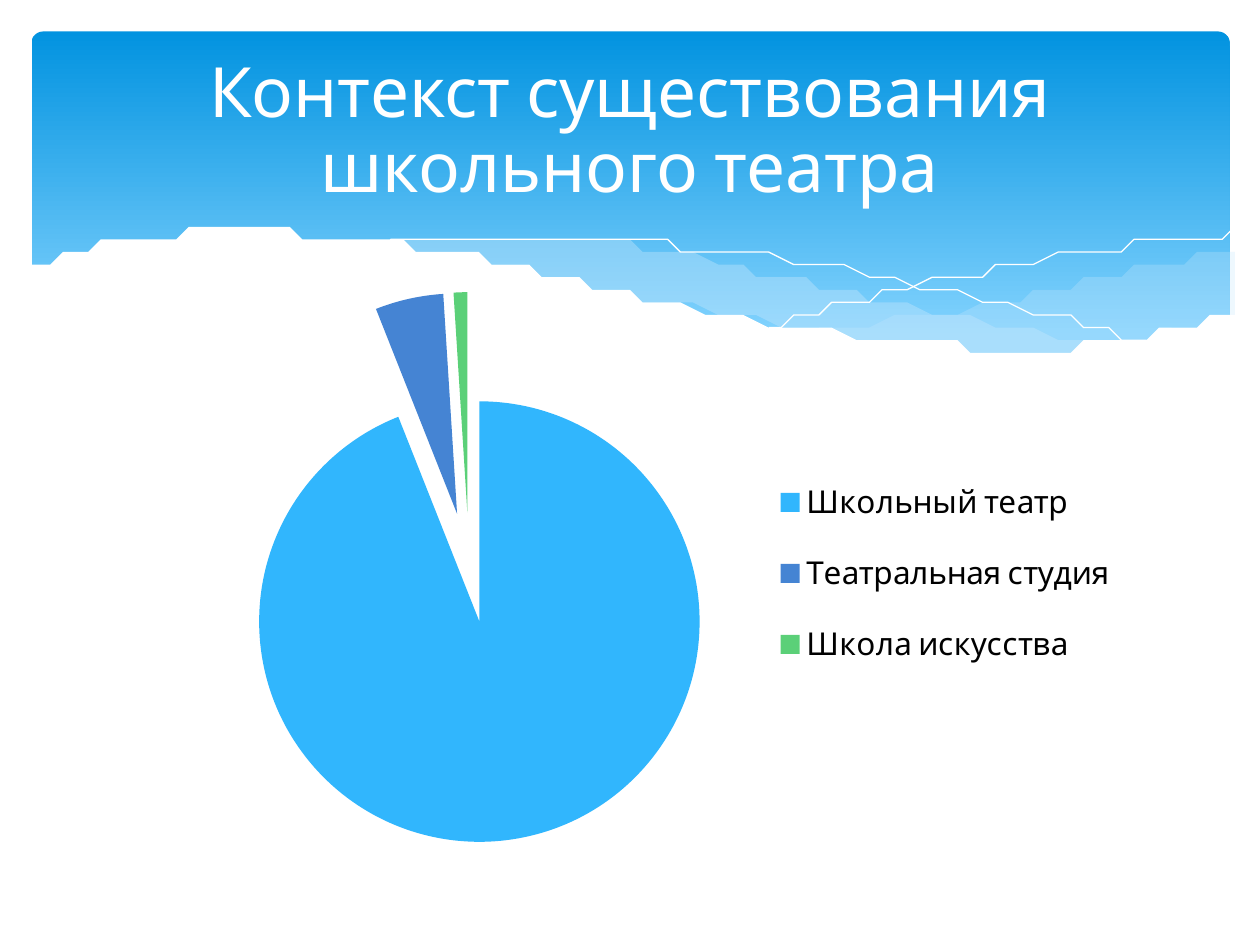
"""Build the slide on the setting of a school theatre."""
import pptx
import pptx.chart.data
import pptx.dml.color
import pptx.enum.chart
import pptx.enum.shapes
import pptx.enum.text
import pptx.oxml
import pptx.oxml.ns
import pptx.util

FONT = "Cabin"
WHITE = "FFFFFF"
deck = pptx.Presentation()
deck.slide_width = pptx.util.Inches(10)
deck.slide_height = pptx.util.Inches(7.5)
col = deck.slide_width // 100
row = deck.slide_height // 75
slide = deck.slides.add_slide(deck.slide_layouts[6])


def tint(code):
    return pptx.dml.color.RGBColor.from_string(code)


def bend(knots, steps=6):
    """Return points of a smooth curve through the knots."""
    ends = [knots[0]] + knots + [knots[-1]]
    curve = [knots[0]]
    for a, b, c, d in zip(ends, ends[1:], ends[2:], ends[3:]):
        for step in range(1, steps + 1):
            t = step / steps
            curve.append(tuple(
                (2 * q + (r - p) * t + (2 * p - 5 * q + 4 * r - s) * t**2
                 + (3 * q - p - 3 * r + s) * t**3) / 2
                for p, q, r, s in zip(a, b, c, d)))
    return curve


band = slide.shapes.add_shape(
    pptx.enum.shapes.MSO_SHAPE.ROUNDED_RECTANGLE,
    int(2.5 * col), int(2.5 * row), int(95.1 * col), 27 * row)
band.adjustments[0] = 0.034
band.shadow.inherit = False
band.line.fill.background()
band.fill.gradient()
band.fill.gradient_angle = 270
for stop, code, place in zip(band.fill.gradient_stops, ["0293E0", "83D3FE"], [0, 0.9]):
    stop.color.rgb = tint(code)
    stop.position = place

right = (bend([(97.5, 20), (92.1, 21), (86.1, 22.3), (77.9, 24.2), (66.1, 26.5)])
         + bend([(66.1, 26.5), (73.2, 27.4), (80.3, 27.8), (87.2, 27.4),
                 (92.8, 26.3), (97.6, 24.7)]) + [(97.6, 20)])
left = (bend([(89.3, 27.3), (80.7, 26), (70.6, 24), (62.9, 22.2), (55.5, 20.5),
              (46.5, 19.1), (38, 18.5), (28.6, 19.1)])
        + bend([(28.6, 19.1), (36.2, 20.3), (44.9, 22.2), (56.6, 24.8), (66.5, 26.6),
                (74.8, 27.6), (81.8, 27.8), (89.3, 27.3)]))
fall = bend([(30.9, 19.5), (35.3, 18.9), (41.6, 18.7), (51, 19.2), (60.8, 20.4),
             (72.7, 22.6), (83.1, 25.1), (90.7, 27.2)])
rise = bend([(61.3, 25.7), (67.2, 24.1), (77.6, 21.6), (86.6, 19.9),
             (92.4, 19), (97.5, 18.5)])
edge = bend([(97.7, 24.6), (93, 26.2), (87.5, 27.3), (80.9, 27.7), (72.6, 27.2),
             (62.6, 25.8), (52.9, 23.9), (44.7, 22), (36.5, 20.2), (27.1, 18.8),
             (19.3, 18.4), (13.2, 18.6), (8.5, 19.3), (5.2, 20.1), (2.3, 21.3)])
edge += [(2.3, 32.9), (97.7, 32.9)]

for dots, code, clear in [(right, "C6E7FC", 29), (left, "C6E7FC", 40), (fall, None, 0),
                          (rise, None, 0), (edge, WHITE, 100)]:
    pen = slide.shapes.build_freeform(*dots[0], scale=(col, row))
    pen.add_line_segments(dots[1:], close=code is not None)
    wave = pen.convert_to_shape()
    wave.shadow.inherit = False
    if code is None:
        wave.fill.background()
        wave.line.color.rgb = tint(WHITE)
        wave.line.width = pptx.util.Pt(0)
        continue
    wave.line.fill.background()
    wave.fill.solid()
    wave.fill.fore_color.rgb = tint(code)
    if clear < 100:
        shade = wave.fill._xPr.find(".//" + pptx.oxml.ns.qn("a:srgbClr"))
        shade.append(pptx.oxml.parse_xml(
            f'<a:alpha {pptx.oxml.ns.nsdecls("a")} val="{clear * 1000}"/>'))

head = slide.shapes.add_textbox(5 * col, int(3.7 * row), 90 * col, int(13.7 * row))
frame = head.text_frame
frame.word_wrap = True
frame.vertical_anchor = pptx.enum.text.MSO_ANCHOR.MIDDLE
para = frame.paragraphs[0]
para.alignment = pptx.enum.text.PP_ALIGN.CENTER
para.line_spacing = 0.9
run = para.add_run()
run.text = "Контекст существования школьного театра"
run.font.name = FONT
run.font.size = pptx.util.Pt(39.6)
run.font.color.rgb = tint(WHITE)

data = pptx.chart.data.CategoryChartData()
data.categories = ["Школьный театр", "Театральная студия", "Школа искусства"]
data.add_series("Series 1", [94, 5, 1])
chart = slide.shapes.add_chart(
    pptx.enum.chart.XL_CHART_TYPE.PIE_EXPLODED, int(10.6 * col), int(21.8 * row),
    int(79.5 * col), int(46.5 * row), data).chart
chart.has_title = False
chart.font.name = FONT
chart.font.size = pptx.util.Pt(18)
chart.font.color.rgb = tint("000000")
chart.has_legend = True
chart.legend.position = pptx.enum.chart.XL_LEGEND_POSITION.RIGHT
chart.legend.include_in_layout = False
plot = chart.plots[0]
plot.vary_by_categories = True
plot.has_data_labels = False
pie = plot.series[0]
for spot, code in enumerate(["31B6FD", "4584D3", "5BD078"]):
    slice = pie.points[spot]
    slice.format.fill.solid()
    slice.format.fill.fore_color.rgb = tint(code)
    slice.format.line.fill.background()

names = pptx.oxml.ns.nsdecls("c")
tag = pptx.oxml.ns.qn
for old in pie._element.findall(tag("c:explosion")):
    pie._element.remove(old)
burst = pptx.oxml.parse_xml(f'<c:explosion {names} val="25"/>')
pie._element.find(tag("c:dPt")).addprevious(burst)

area = chart._chartSpace.chart.plotArea
key = chart.legend._element
for part, inner, box in [(area, '<c:layoutTarget val="inner"/>', (0.06, 0.03, 0.55, 0.94)),
                         (key, "", (0.63, 0.3, 0.36, 0.42))]:
    for old in part.findall(tag("c:layout")):
        part.remove(old)
    sizes = "".join(f'<c:{side} val="{share}"/>' for side, share in zip("xywh", box))
    form = pptx.oxml.parse_xml(
        f'<c:layout {names}><c:manualLayout>{inner}<c:xMode val="edge"/>'
        f'<c:yMode val="edge"/>{sizes}</c:manualLayout></c:layout>')
    part.insert(0 if part is area else 1, form)

deck.save("out.pptx")
